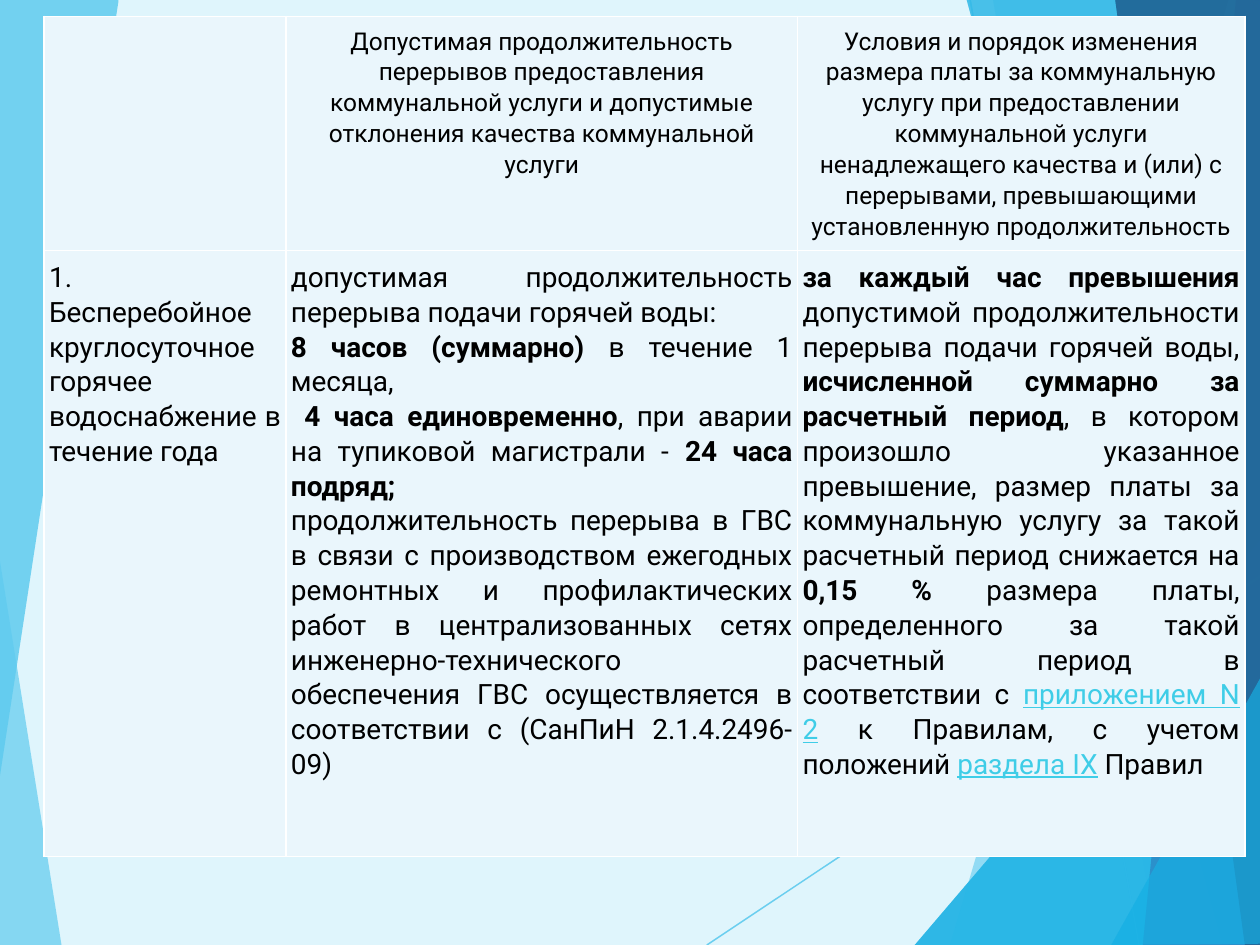
import pptx
import pptx.dml.color
import pptx.enum.shapes
import pptx.enum.text
import pptx.oxml
import pptx.oxml.ns
import pptx.util

Inches = pptx.util.Inches
Align = pptx.enum.text.PP_ALIGN
NAMESPACE = pptx.oxml.ns.nsdecls("a")
SKY, AZURE, LINK = "5FCBEF", "17B0E4", "3FCDE7"


def colour(code):
    return pptx.dml.color.RGBColor.from_string(code)


def write(paragraph, text, font="Roboto", size=16, code="000000", bold=False, underline=False):
    run = paragraph.add_run()
    run.text = text
    run.font.name = font
    run.font.size = pptx.util.Pt(size)
    run.font.bold = bold
    run.font.underline = underline
    run.font.color.rgb = colour(code)


def set_opacity(shape, percent):
    for node in shape._element.spPr.iter(pptx.oxml.ns.qn("a:srgbClr")):
        node.append(pptx.oxml.parse_xml(f'<a:alpha {NAMESPACE} val="{percent * 1000}"/>'))


class SlideBuilder:
    cell_fill = "EAF6FC"
    border = "FFFFFF"

    def __init__(self, slide, background):
        self.slide = slide
        slide.background.fill.solid()
        slide.background.fill.fore_color.rgb = colour(background)

    def facet(self, points, code, opacity):
        corners = [(Inches(x), Inches(y)) for x, y in points]
        builder = self.slide.shapes.build_freeform(*corners[0])
        builder.add_line_segments(corners[1:], close=True)
        shape = builder.convert_to_shape()
        shape.shadow.inherit = False
        shape.fill.solid()
        shape.fill.fore_color.rgb = colour(code)
        shape.line.fill.background()
        set_opacity(shape, opacity)

    def line(self, start, end, code, opacity):
        ends = [Inches(value) for value in (*start, *end)]
        connector = self.slide.shapes.add_connector(
            pptx.enum.shapes.MSO_CONNECTOR.STRAIGHT, *ends)
        connector.line.color.rgb = colour(code)
        connector.line.width = pptx.util.Pt(0.75)
        connector._element.spPr.append(pptx.oxml.parse_xml(f"<a:effectLst {NAMESPACE}/>"))
        set_opacity(connector, opacity)

    def cell(self, cell, paragraphs, alignment, size):
        cell.margin_left = cell.margin_right = Inches(0.04)
        cell.margin_top = cell.margin_bottom = Inches(0.07)
        properties = cell._tc.get_or_add_tcPr()
        for side in "LRTB":
            properties.append(pptx.oxml.parse_xml(
                f'<a:ln{side} {NAMESPACE} w="12700"><a:solidFill>'
                f'<a:srgbClr val="{self.border}"/></a:solidFill></a:ln{side}>'))
        cell.fill.solid()
        cell.fill.fore_color.rgb = colour(self.cell_fill)
        for index, runs in enumerate(paragraphs):
            frame = cell.text_frame
            paragraph = frame.add_paragraph() if index else frame.paragraphs[0]
            paragraph.alignment = alignment
            paragraph.line_spacing = 1.07
            for text, style in runs:
                write(paragraph, text, size=size, **style)

    def table(self, position, widths, heights, rows):
        shape = self.slide.shapes.add_table(
            len(heights), len(widths), *map(Inches, position),
            Inches(sum(widths)), Inches(sum(heights)))
        table = shape.table
        for column, width in zip(table.columns, widths):
            column.width = Inches(width)
        formats = [(Align.CENTER, 14), (Align.JUSTIFY, 16)]
        for r, (height, cells) in enumerate(zip(heights, rows)):
            table.rows[r].height = Inches(height)
            for c, paragraphs in enumerate(cells):
                self.cell(table.cell(r, c), paragraphs, *formats[r])


PLAIN, BOLD = {}, {"bold": True}
LINKED = {"code": LINK, "underline": True}

LINES = [((5.61, 7.5), (10.01, 4.57)), ((7.7, 0), (9.04, 7.5))]
FACETS = [
    ([(9.75, 0), (7.54, 7.5), (10.02, 7.51), (10.01, 0.01)], SKY, 36),
    ([(7.88, -0.01), (9.19, 7.5), (10.01, 7.5), (10.01, -0.01)], SKY, 20),
    ([(7.26, 7.5), (10, 4.29), (10.01, 7.5)], AZURE, 66),
    ([(7.67, -0.01), (9.7, 7.5), (10.01, 7.49), (10.01, -0.01)], AZURE, 50),
    ([(9.81, -0.01), (9.07, 7.5), (10.01, 7.5), (10, -0.01)], "2E83C3", 70),
    ([(8.85, -0.01), (9.88, 7.5), (10.02, 7.5), (10, -0.01)], "226292", 82),
    ([(8.82, 7.5), (10.02, 5.35), (10.02, 7.49)], AZURE, 66),
]
LOWER_LEFT = [(-0.01, 4.39), (0.49, 7.51), (-0.01, 7.5)]
UPPER_LEFT = [(-0.01, 0), (0.94, -0.01), (0.94, 0.01), (-0.01, 6.22)]

HEADER = [
    [],
    [[("Допустимая продолжительность перерывов предоставления коммунальной услуги "
       "и допустимые отклонения качества коммунальной услуги", PLAIN)]],
    [[("Условия и порядок изменения размера платы за коммунальную услугу при "
       "предоставлении коммунальной услуги ненадлежащего качества и (или) с "
       "перерывами, превышающими установленную продолжительность", PLAIN)]],
]
HOT_WATER = [
    [[("1. Бесперебойное круглосуточное горячее водоснабжение в течение года", PLAIN)]],
    [
        [("допустимая продолжительность перерыва подачи горячей воды:", PLAIN)],
        [("8 часов (суммарно) ", BOLD), ("в течение 1 месяца,", PLAIN)],
        [(" ", PLAIN), ("4 часа единовременно", BOLD),
         (", при аварии на тупиковой магистрали - ", PLAIN), ("24 часа подряд;", BOLD)],
        [("продолжительность перерыва в ГВС в связи с производством ежегодных "
          "ремонтных и профилактических работ в централизованных сетях "
          "инженерно-технического обеспечения ГВС осуществляется в соответствии с "
          "(СанПиН 2.1.4.2496-09)", PLAIN)],
    ],
    [[
        ("за каждый час превышения ", BOLD),
        ("допустимой продолжительности перерыва подачи горячей воды, ", PLAIN),
        ("исчисленной суммарно за расчетный период", BOLD),
        (", в котором произошло указанное превышение, размер платы за коммунальную "
         "услугу за такой расчетный период снижается на ", PLAIN),
        ("0,15 % ", BOLD),
        ("размера платы, определенного за такой расчетный период в соответствии с ", PLAIN),
        ("приложением N 2", LINKED),
        (" к Правилам, с учетом положений ", PLAIN),
        ("раздела IX", LINKED),
        (" Правил", PLAIN),
    ]],
]


def main():
    presentation = pptx.Presentation()
    presentation.slide_width = Inches(10)
    presentation.slide_height = Inches(7.5)
    slide = presentation.slides.add_slide(presentation.slide_layouts[6])
    builder = SlideBuilder(slide, "DFF5FC")
    builder.facet(LOWER_LEFT, SKY, 70)
    for layer in range(2):
        for start, end in LINES:
            builder.line(start, end, SKY, 70)
        for points, code, opacity in FACETS:
            builder.facet(points, code, opacity)
    builder.facet(UPPER_LEFT, SKY, 85)
    builder.table((0.35, 0.13), [1.92, 4.06, 3.55], [1.81, 4.81], [HEADER, HOT_WATER])
    presentation.save("out.pptx")


if __name__ == "__main__":
    main()
